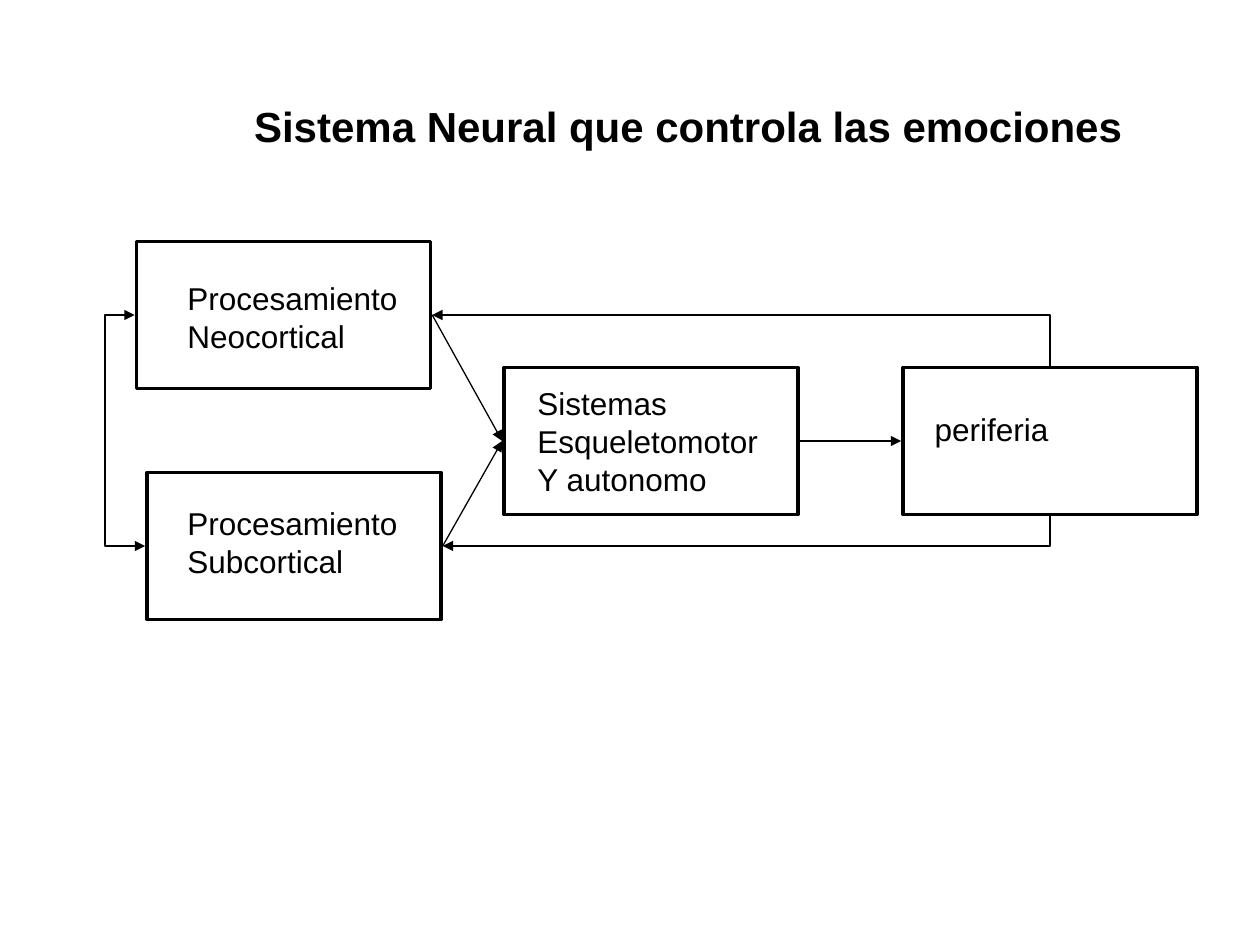
from lxml import etree
from pptx import Presentation
from pptx.dml.color import RGBColor
from pptx.enum import shapes, text
from pptx.oxml.ns import qn
from pptx.util import Pt

INK = {"text": "000000", "line": "000000"}
WIDE, HIGH, GAP = 168, 84, 1


class Chart:
    """Style and current slide; all lengths are in points."""
    font, size, edge, thin = "Arial", 18, 2, 0.75

    def __init__(self, slide):
        self.slide = slide

    def color(self, name):
        return RGBColor.from_string(INK[name])

    def fill_text(self, shape, lines, size, bold=False):
        frame = shape.text_frame
        frame.word_wrap = False
        frame.auto_size = text.MSO_AUTO_SIZE.SHAPE_TO_FIT_TEXT
        frame.vertical_anchor = text.MSO_ANCHOR.TOP
        for i, line in enumerate(lines):
            para = frame.add_paragraph() if i else frame.paragraphs[0]
            para.alignment = text.PP_ALIGN.LEFT
            run = para.add_run()
            run.text = line
            run.font.name, run.font.size = self.font, Pt(size)
            run.font.bold = bold
            run.font.color.rgb = self.color("text")

    def title(self, line, x, y, w, h):
        shape = self.slide.shapes.title
        shape.left, shape.top, shape.width, shape.height = map(Pt, (x, y, w, h))
        self.fill_text(shape, [line], 24, True)

    def label(self, lines, x, y, w, h):
        shape = self.slide.shapes.add_textbox(*map(Pt, (x, y, w, h)))
        self.fill_text(shape, lines, self.size)

    def box(self, x, y):
        shape = self.slide.shapes.add_shape(
            shapes.MSO_SHAPE.RECTANGLE, Pt(x), Pt(y), Pt(WIDE), Pt(HIGH))
        shape.shadow.inherit = False
        shape.fill.background()
        shape.line.color.rgb = self.color("line")
        shape.line.width = Pt(self.edge)

    def arrow(self, start, end, kind=shapes.MSO_CONNECTOR.STRAIGHT, both=False):
        link = self.slide.shapes.add_connector(kind, *map(Pt, start + end))
        link.line.color.rgb = self.color("line")
        link.line.width = Pt(self.thin)
        props = link._element.spPr
        for tag in ("headEnd", "tailEnd") if both else ("tailEnd",):
            etree.SubElement(props.find(qn("a:ln")), qn("a:" + tag), type="triangle")
        etree.SubElement(props, qn("a:effectLst"))
        return link

    def loop(self, start, end, x):
        """Two-headed elbow whose upright runs at x."""
        link = self.arrow(start, end, shapes.MSO_CONNECTOR.ELBOW, True)
        geom = link._element.spPr.find(qn("a:prstGeom"))
        bend = round((x - start[0]) / (end[0] - start[0]) * 100000)
        guides = geom.find(qn("a:avLst"))
        etree.SubElement(guides, qn("a:gd"), name="adj1", fmla=f"val {bend}")

    def turn(self, start, end):
        """One-corner arrow: first up or down, then to the left."""
        w, h = abs(end[1] - start[1]), start[0] - end[0]
        x, y = (start[0] + end[0] - w) / 2, (start[1] + end[1] - h) / 2
        link = self.arrow((x, y), (x + w, y + h), shapes.MSO_CONNECTOR.ELBOW)
        props = link._element.spPr
        props.find(qn("a:prstGeom")).set("prst", "bentConnector2")
        frame = props.find(qn("a:xfrm"))
        frame.set("rot", "5400000")
        if end[1] < start[1]:
            frame.set("flipH", "1")


def left(spot):
    return spot[0] - GAP, spot[1] + HIGH / 2


def right(spot):
    return spot[0] + WIDE + GAP, spot[1] + HIGH / 2


def main():
    deck = Presentation()
    deck.slide_width, deck.slide_height = Pt(720), Pt(540)
    chart = Chart(deck.slides.add_slide(deck.slide_layouts[5]))

    # Title
    chart.title("Sistema Neural que controla las emociones", 138, 54, 515.5, 36.5)

    # Boxes
    neo, sub, motor, edge = (78, 138), (84, 270), (288, 210), (516, 210)
    for spot in (neo, sub, motor, edge):
        chart.box(*spot)

    # Feedback paths
    mid = edge[0] + WIDE / 2
    chart.loop(left(neo), left(sub), 60)
    chart.turn((mid, edge[1] - GAP), right(neo))
    chart.turn((mid, edge[1] + HIGH + GAP), right(sub))

    # Forward arrows
    for start, end in ((neo, motor), (sub, motor), (motor, edge)):
        chart.arrow(right(start), left(end))

    # Labels
    chart.label(["Procesamiento", "Neocortical"], 100, 156, 136, 51)
    chart.label(["Procesamiento", "Subcortical"], 100, 284.5, 136, 51)
    chart.label(["Sistemas", "Esqueletomotor", "Y autonomo"], 300, 216, 146, 94)
    chart.label(["periferia"], 527, 231, 80, 29)

    deck.save("out.pptx")


if __name__ == "__main__":
    main()
